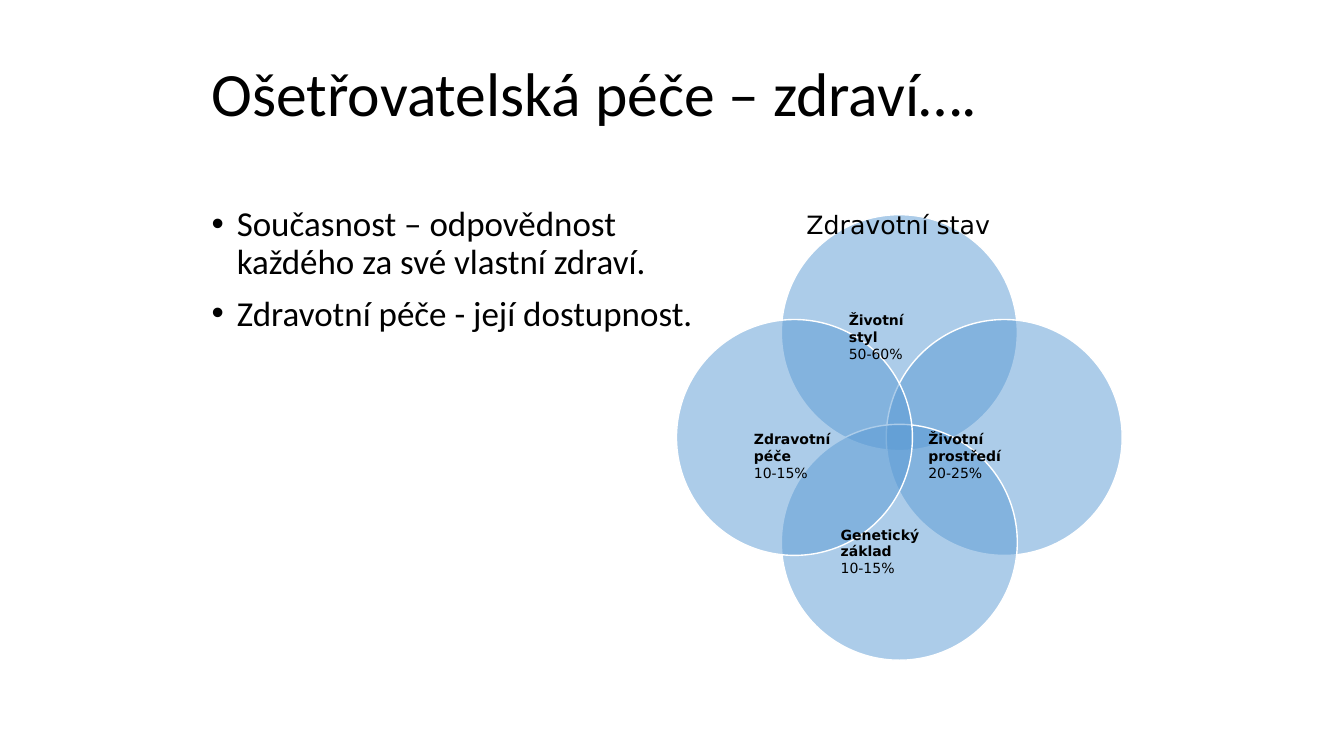
from dataclasses import dataclass

from lxml import etree
from pptx import Presentation
from pptx.dml.color import RGBColor
from pptx.enum.shapes import MSO_SHAPE
from pptx.enum.text import MSO_ANCHOR
from pptx.oxml.ns import qn
from pptx.util import Inches, Pt

OVAL = MSO_SHAPE.OVAL
TOP, MIDDLE = MSO_ANCHOR.TOP, MSO_ANCHOR.MIDDLE


@dataclass(frozen=True)
class Theme:
    text: RGBColor = RGBColor(0x00, 0x00, 0x00)
    circle: RGBColor = RGBColor(0x5B, 0x9B, 0xD5)
    outline: RGBColor = RGBColor(0xFF, 0xFF, 0xFF)
    opacity: int = 50
    font: str = "Calibri"
    diagram_font: str = "DejaVu Sans"
    title_size: int = 44
    body_size: int = 25
    heading_size: int = 18
    label_size: int = 10


THEME = Theme()

TITLE = "Ošetřovatelská péče – zdraví…."
BULLETS = [
    "Současnost – odpovědnost každého za své vlastní zdraví.",
    "Zdravotní péče - její dostupnost.",
]
HEADING = "Zdravotní stav"
# Factor, share, circle direction from the centre (x, y), label box (left, top, width)
FACTORS = [
    ("Životní\vstyl", "50-60%", (0, -1), (8.32, 3.04, 1.07)),
    ("Životní\vprostředí", "20-25%", (1, 0), (9.11, 4.22, 1.5)),
    ("Genetický\vzáklad", "10-15%", (0, 1), (8.24, 5.17, 1.52)),
    ("Zdravotní\vpéče", "10-15%", (-1, 0), (7.38, 4.22, 1.36)),
]
DIAGRAM_CENTER = (8.92, 4.34)
DIAMETER = 2.34
CIRCLE_OFFSET = 1.04
LABEL_HEIGHT = 0.59


def add_text(slide, box, lines, size, font, anchor=TOP, wrap=True):
    text_box = slide.shapes.add_textbox(*map(Inches, box))
    frame = text_box.text_frame
    frame.word_wrap = wrap
    frame.vertical_anchor = anchor
    frame.text = "\n".join(lines)
    for paragraph in frame.paragraphs:
        for run in paragraph.runs:
            run.font.size = Pt(size)
            run.font.name = font
            run.font.color.rgb = THEME.text
    return frame.paragraphs


def add_bullet(paragraph):
    properties = paragraph._p.get_or_add_pPr()
    properties.set("marL", str(Inches(0.25)))
    properties.set("indent", str(-Inches(0.25)))
    etree.SubElement(properties, qn("a:buFont")).set("typeface", "Arial")
    etree.SubElement(properties, qn("a:buChar")).set("char", "•")


def add_circle(group, direction):
    left, top = (
        center + CIRCLE_OFFSET * step - DIAMETER / 2
        for center, step in zip(DIAGRAM_CENTER, direction)
    )
    circle = group.shapes.add_shape(
        OVAL, Inches(left), Inches(top), Inches(DIAMETER), Inches(DIAMETER)
    )
    circle.shadow.inherit = False
    circle.fill.solid()
    circle.fill.fore_color.rgb = THEME.circle
    color = circle._element.spPr.find(qn("a:solidFill")).find(qn("a:srgbClr"))
    etree.SubElement(color, qn("a:alpha")).set("val", str(THEME.opacity * 1000))
    circle.line.color.rgb = THEME.outline
    circle.line.width = Pt(1)


def main():
    presentation = Presentation()
    presentation.slide_width = Inches(13.33)
    presentation.slide_height = Inches(7.5)
    slide = presentation.slides.add_slide(presentation.slide_layouts[6])

    title = add_text(
        slide, (2, 0.33, 10.66, 1.25), [TITLE], THEME.title_size, THEME.font, MIDDLE
    )
    title[0].line_spacing = 0.9

    for paragraph in add_text(
        slide, (2, 2, 5.22, 4.5), BULLETS, THEME.body_size, THEME.font
    ):
        paragraph.line_spacing = 0.9
        paragraph.space_before = Pt(10)
        add_bullet(paragraph)

    circles = slide.shapes.add_group_shape()
    for _, _, direction, _ in FACTORS:
        add_circle(circles, direction)

    for factor, share, _, position in FACTORS:
        name, _ = add_text(
            slide, (*position, LABEL_HEIGHT), [factor, share],
            THEME.label_size, THEME.diagram_font,
        )
        for run in name.runs:
            run.font.bold = True

    add_text(
        slide, (7.9, 2.03, 2.02, 0.4), [HEADING],
        THEME.heading_size, THEME.diagram_font, wrap=False,
    )
    presentation.save("out.pptx")


if __name__ == "__main__":
    main()
